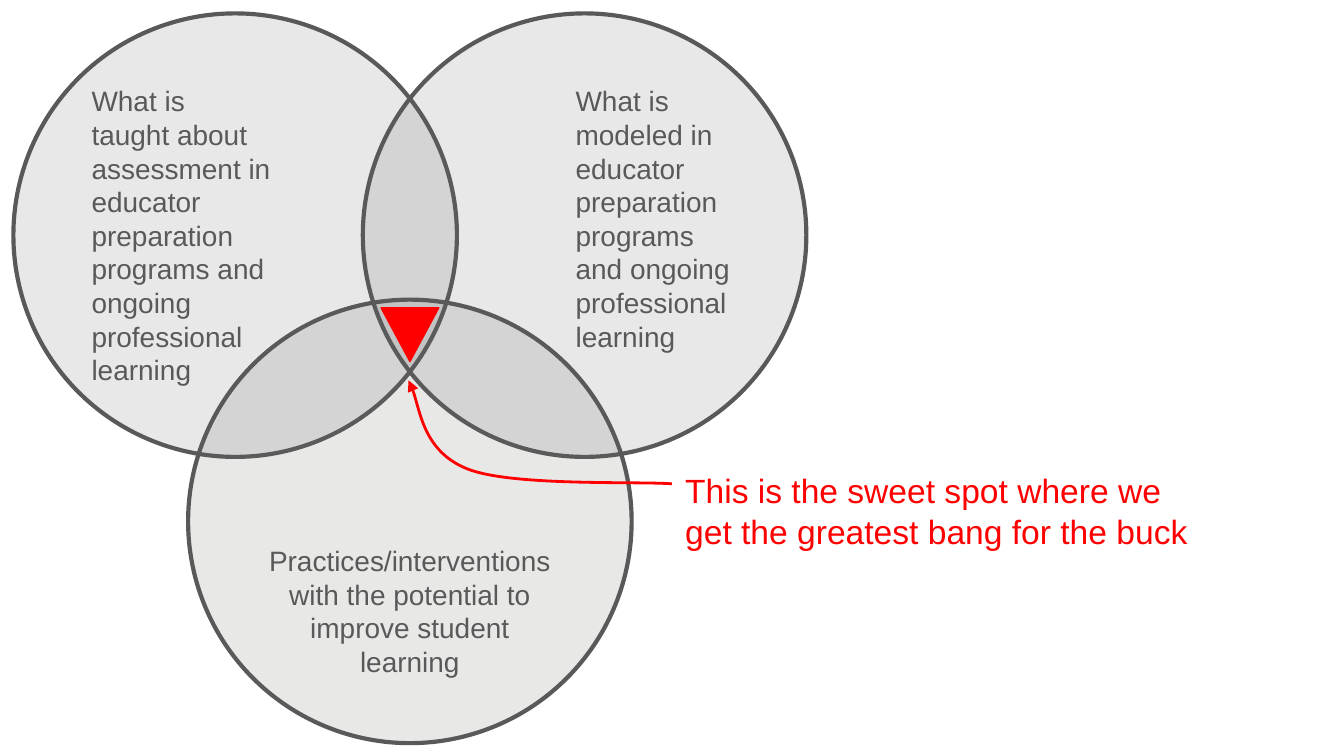
from pptx import Presentation
from pptx.dml.color import RGBColor
from pptx.enum import shapes, text
from pptx.oxml import ns, xmlchemy
from pptx import util as u

COLORS = {"gray": "666666", "olive": "666662", "dark": "595959", "red": "FF0000"}
SIDES = ("left", "top", "right", "bottom")


def color(name):
    """Return the named colour."""
    return RGBColor.from_string(COLORS[name])


def set_line(shape, name, width):
    """Give a shape its outline and no shadow."""
    shape.shadow.inherit = False
    shape.line.color.rgb = color(name)
    shape.line.width = u.Pt(width)


def write(shape, lines, insets, anchor, align, size, name):
    """Write one paragraph per line in a shape."""
    frame = shape.text_frame
    formats = {"word_wrap": True, "vertical_anchor": anchor}
    formats.update((f"margin_{side}", u.Inches(inset)) for side, inset in zip(SIDES, insets))
    for key, value in formats.items():
        setattr(frame, key, value)
    frame.text = "\n".join(lines)
    for para in frame.paragraphs:
        para.alignment = align
        for key, value in {"name": "Arial", "size": u.Pt(size)}.items():
            setattr(para.font, key, value)
        para.font.color.rgb = color(name)


def add_circle(page, box, fill, lines, insets, anchor, align):
    """Draw one translucent circle of the diagram with its text."""
    circle = page.shapes.add_shape(shapes.MSO_SHAPE.OVAL, *map(u.Inches, box))
    circle.fill.solid()
    circle.fill.fore_color.rgb = color(fill)
    alpha = xmlchemy.OxmlElement("a:alpha")
    alpha.set("val", "15000")
    circle._element.spPr.find(ns.qn("a:solidFill"))[0].append(alpha)
    set_line(circle, "dark", 2.25)
    write(circle, lines, insets, anchor, align, 15, "dark")


def add_venn(page, left, top):
    """Draw the three overlapping circles and the centre triangle."""
    size, across, down = 3.3, 2.6, 2.13
    middle, bottom = text.MSO_ANCHOR.MIDDLE, text.MSO_ANCHOR.BOTTOM
    start, center = text.PP_ALIGN.LEFT, text.PP_ALIGN.CENTER
    circles = [
        (0, 0, "gray",
         ["What is", "taught about assessment in educator preparation programs "
          "and ongoing professional learning"], (0.1, 0, 0.5, 0), middle, start),
        (across, 0, "gray",
         ["What is modeled in educator preparation programs and ongoing "
          "professional learning"], (1.1, 0, 0, 0.25), middle, start),
        (across / 2, down, "olive",
         ["Practices/interventions with the potential to improve student",
          "learning"], (0, 0, 0, 0), bottom, center),
    ]
    for x, y, *details in circles:
        add_circle(page, (left + x, top + y, size, size), *details)
    width, height = 0.43, 0.4
    box = (left + (across + size - width) / 2, top + 2.19, width, height)
    spot = page.shapes.add_shape(shapes.MSO_SHAPE.ISOSCELES_TRIANGLE, *map(u.Inches, box))
    spot.rotation = 180
    spot.fill.solid()
    spot.fill.fore_color.rgb = color("red")
    set_line(spot, "red", 0.75)


def add_callout(page, left, top, width, height):
    """Write the callout and draw its curved arrow to the sweet spot."""
    box = page.shapes.add_textbox(*map(u.Inches, (left, top, width, height)))
    write(box, ["This is the sweet spot where we", "get the greatest bang for the buck"],
          (0.1,) * 4, text.MSO_ANCHOR.TOP, text.PP_ALIGN.LEFT, 18, "red")
    offsets = [(0, 0.2), (-0.25, 0.18), (-1.19, 0.22), (-1.52, 0.09),
               (-1.85, -0.04), (-1.89, -0.46), (-1.96, -0.57)]
    points = [(u.Inches(left + x), u.Inches(top + y)) for x, y in offsets]
    builder = page.shapes.build_freeform(*points[0])
    builder.add_line_segments(points[1:], close=False)
    arrow = builder.convert_to_shape()
    arrow.fill.background()
    set_line(arrow, "red", 1.5)
    segments = list(arrow._element.iter(ns.qn("a:lnTo")))
    route = segments[0].getparent()
    for first in range(0, len(segments), 3):
        curve = xmlchemy.OxmlElement("a:cubicBezTo")
        for segment in segments[first:first + 3]:
            curve.append(segment[0])
            route.remove(segment)
        route.append(curve)
    tip = xmlchemy.OxmlElement("a:tailEnd")
    tip.set("type", "triangle")
    arrow._element.spPr.find(ns.qn("a:ln")).append(tip)


def main():
    """Build and save the slide."""
    deck = Presentation()
    deck.slide_width = u.Inches(10)
    deck.slide_height = deck.slide_width * 9 // 16
    page = deck.slides.add_slide(deck.slide_layouts[6])
    add_venn(page, 0.1, 0.1)
    add_callout(page, 5, 3.4, 4.4, 0.82)
    deck.save("out.pptx")


if __name__ == "__main__":
    main()
